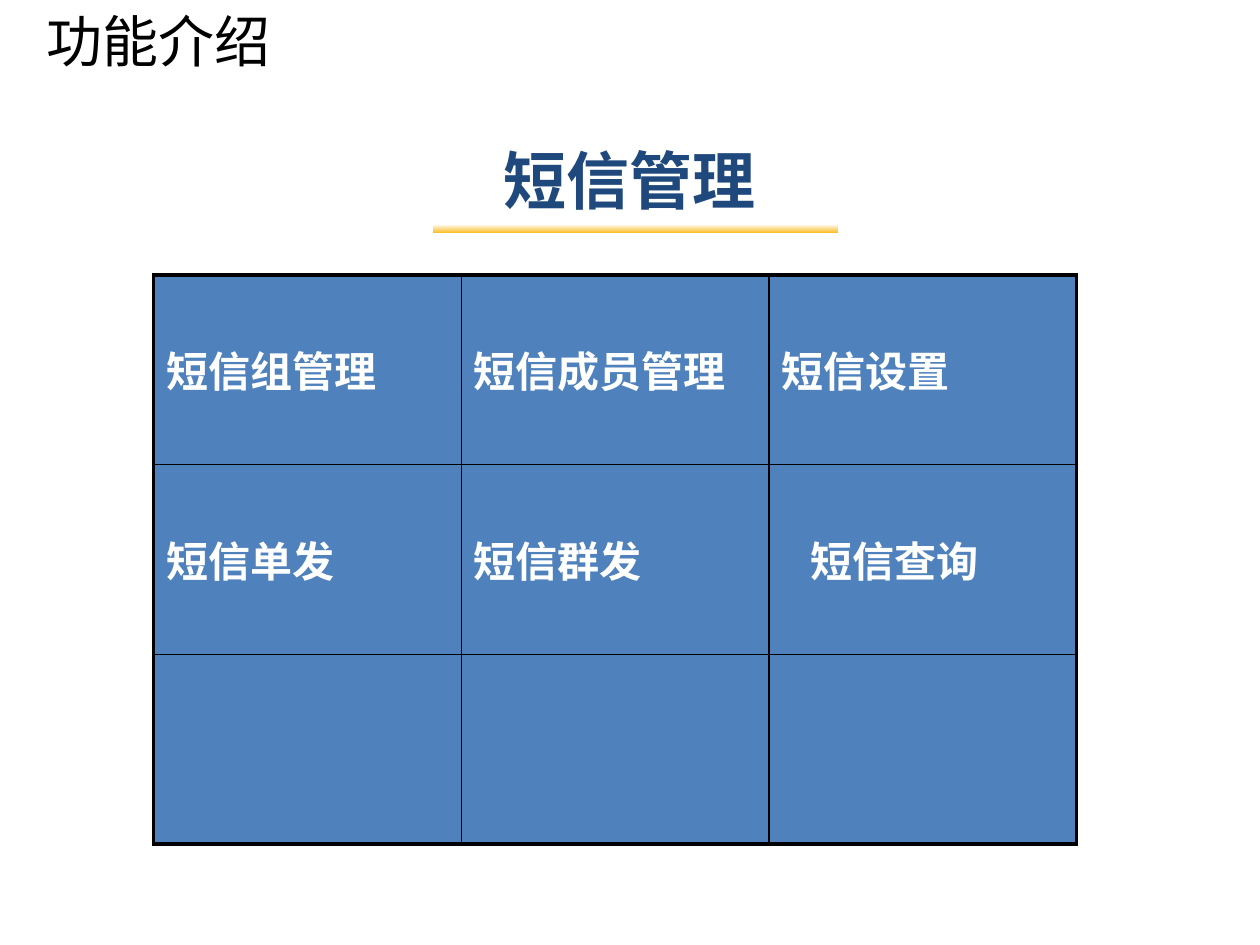
import pptx
import pptx.dml.color
import pptx.enum.shapes
import pptx.enum.text
import pptx.oxml.ns
import pptx.util
from lxml import etree

Cm = pptx.util.Cm
Pt = pptx.util.Pt
Align = pptx.enum.text.PP_ALIGN
Anchor = pptx.enum.text.MSO_ANCHOR


def color(hex_text):
    return pptx.dml.color.RGBColor.from_string(hex_text)


def write_text(frame, text, *, size, font, fill, bold=False, align=Align.LEFT):
    frame.word_wrap = True
    paragraph = frame.paragraphs[0]
    paragraph.text = text
    paragraph.alignment = align
    paragraph.space_before = Pt(0)
    paragraph.font.size = Pt(size)
    paragraph.font.name = font
    paragraph.font.bold = bold
    paragraph.font.color.rgb = color(fill)


def set_border(cell, side, width):
    qn = pptx.oxml.ns.qn
    line = etree.SubElement(cell._tc.get_or_add_tcPr(), qn(f"a:ln{side}"), w=str(Pt(width)))
    solid = etree.SubElement(line, qn("a:solidFill"))
    etree.SubElement(solid, qn("a:srgbClr"), val=SlideBuilder.BLACK)


class SlideBuilder:
    BLACK = "000000"
    WHITE = "FFFFFF"
    NAVY = "1F497D"
    BLUE = "4F81BD"
    GOLD = "F9B407"
    HEADING_FONT = "Calibri"
    TABLE_FONT = "Arial"
    OUTER_BORDER = 2.25
    INNER_BORDER = 1

    def __init__(self, slide):
        self.slide = slide

    def title(self, text, left, top, width, height):
        shape = self.slide.shapes.title
        shape.left, shape.top, shape.width, shape.height = map(Cm, (left, top, width, height))
        shape.text_frame.vertical_anchor = Anchor.TOP
        write_text(shape.text_frame, text, size=32, font=self.HEADING_FONT, fill=self.BLACK)

    def heading(self, text, left, top, width, height):
        shape = self.slide.shapes.add_textbox(*map(Cm, (left, top, width, height)))
        shape.text_frame.vertical_anchor = Anchor.MIDDLE
        write_text(shape.text_frame, text, size=36, font=self.HEADING_FONT,
                   fill=self.NAVY, bold=True, align=Align.CENTER)

    def gradient_bar(self, left, top, width, height):
        shape = self.slide.shapes.add_shape(
            pptx.enum.shapes.MSO_SHAPE.RECTANGLE, *map(Cm, (left, top, width, height)))
        shape.shadow.inherit = False
        shape.fill.gradient()
        shape.fill.gradient_angle = 270
        for stop, hex_text in zip(shape.fill.gradient_stops, (self.WHITE, self.GOLD)):
            stop.color.rgb = color(hex_text)
        shape.line.color.rgb = color(self.WHITE)
        shape.line.width = Pt(0.75)

    def table(self, rows, left, top, width, height, indents):
        row_count, column_count = len(rows), len(rows[0])
        table = self.slide.shapes.add_table(
            row_count, column_count, *map(Cm, (left, top, width, height))).table
        table.first_row = table.horz_banding = False
        for r, row in enumerate(rows):
            for c, text in enumerate(row):
                cell = table.cell(r, c)
                on_edge = {"L": c == 0, "R": c == column_count - 1,
                           "T": r == 0, "B": r == row_count - 1}
                for side, outer in on_edge.items():
                    set_border(cell, side, self.OUTER_BORDER if outer else self.INNER_BORDER)
                cell.fill.solid()
                cell.fill.fore_color.rgb = color(self.BLUE)
                cell.vertical_anchor = Anchor.MIDDLE
                if text:
                    cell.margin_left = Cm(indents.get(text, 0.25))
                    write_text(cell.text_frame, text, size=24, font=self.TABLE_FONT,
                               fill=self.WHITE, bold=True)


def main():
    presentation = pptx.Presentation()
    presentation.slide_width = Cm(25.4)
    presentation.slide_height = Cm(19.05)
    builder = SlideBuilder(presentation.slides.add_slide(presentation.slide_layouts[5]))

    builder.title("功能介绍", 0.69, 0, 22.86, 1.73)
    builder.heading("短信管理", 1.9, 2.29, 21.6, 2.64)
    builder.gradient_bar(8.71, 4.52, 8.2, 0.2)
    features = [
        ["短信组管理", "短信成员管理", "短信设置"],
        ["短信单发", "短信群发", "短信查询"],
        ["", "", ""],
    ]
    builder.table(features, 3.1, 5.54, 18.6, 11.48, indents={"短信查询": 0.84})

    presentation.save("out.pptx")


if __name__ == "__main__":
    main()
